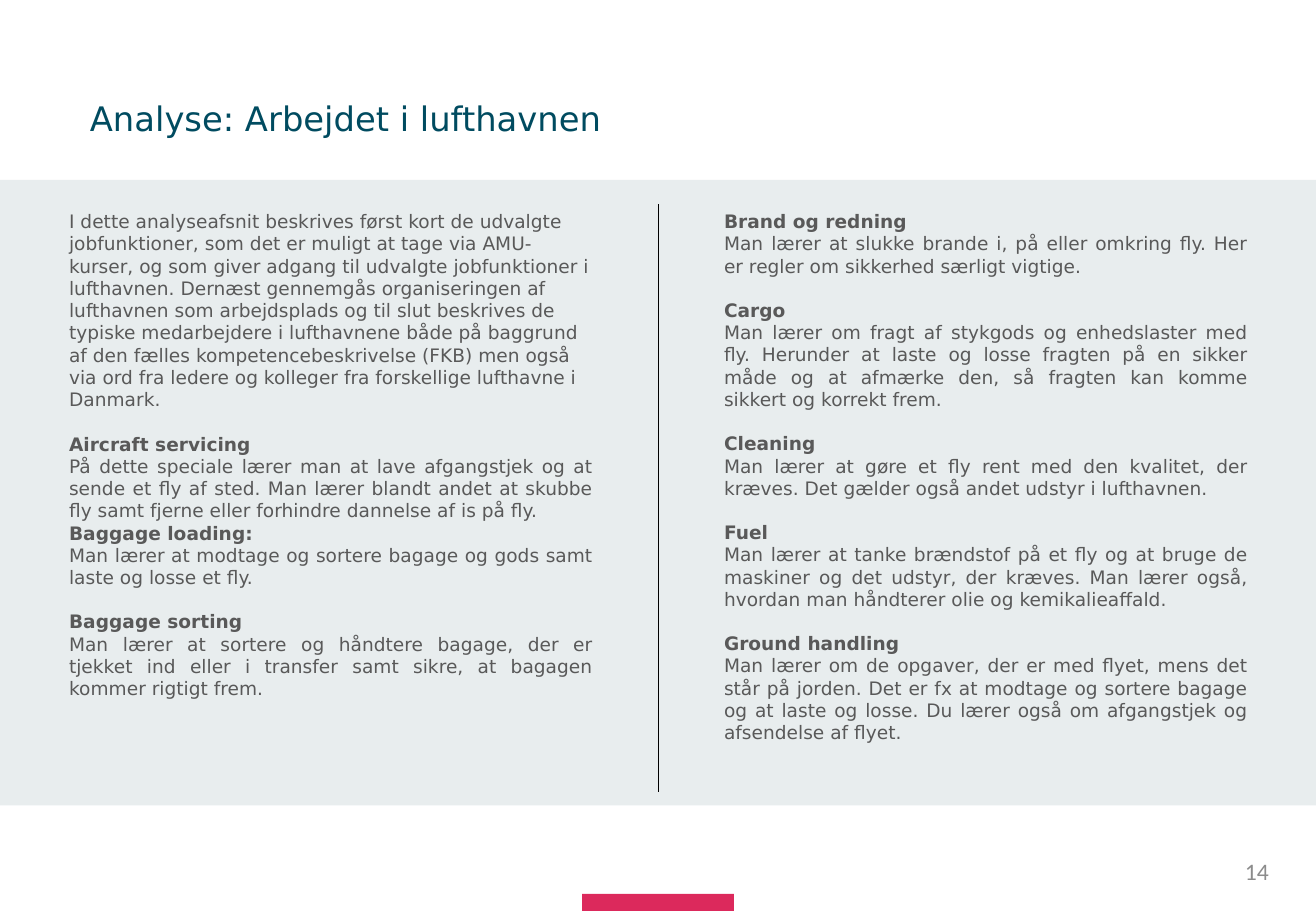
from lxml.etree import SubElement
from pptx import Presentation
from pptx.dml.color import RGBColor
from pptx.enum.shapes import MSO_CONNECTOR as Connector, MSO_SHAPE as Shape
from pptx.enum.text import MSO_ANCHOR as Anchor, PP_ALIGN as Align
from pptx.oxml.ns import qn
from pptx.util import Inches, Pt

BODY_FONT = "DejaVu Sans"
SECTION_GAP = 13

INTRO = (
    "I dette analyseafsnit beskrives først kort de udvalgte jobfunktioner, som det er muligt "
    "at tage via AMU-kurser, og som giver adgang til udvalgte jobfunktioner i lufthavnen. "
    "Dernæst gennemgås organiseringen af lufthavnen som arbejdsplads og til slut beskrives de "
    "typiske medarbejdere i lufthavnene både på baggrund af den fælles kompetencebeskrivelse "
    "(FKB) men også via ord fra ledere og kolleger fra forskellige lufthavne i Danmark."
)

LEFT_SECTIONS = [
    ("Aircraft servicing",
     "På dette speciale lærer man at lave afgangstjek og at sende et fly af sted. Man lærer "
     "blandt andet at skubbe fly samt fjerne eller forhindre dannelse af is på fly.",
     SECTION_GAP),
    ("Baggage loading: ",
     "Man lærer at modtage og sortere bagage og gods samt laste og losse et fly.",
     0),
    ("Baggage sorting",
     "Man lærer at sortere og håndtere bagage, der er tjekket ind eller i transfer samt "
     "sikre, at bagagen kommer rigtigt frem.",
     SECTION_GAP),
]

RIGHT_SECTIONS = [
    ("Brand og redning",
     "Man lærer at slukke brande i, på eller omkring fly. Her er regler om sikkerhed "
     "særligt vigtige.",
     0),
    ("Cargo",
     "Man lærer om fragt af stykgods og enhedslaster med fly. Herunder at laste og losse "
     "fragten på en sikker måde og at afmærke den, så fragten kan komme sikkert og korrekt frem.",
     SECTION_GAP),
    ("Cleaning",
     "Man lærer at gøre et fly rent med den kvalitet, der kræves. Det gælder også andet "
     "udstyr i lufthavnen.",
     SECTION_GAP),
    ("Fuel",
     "Man lærer at tanke brændstof på et fly og at bruge de maskiner og det udstyr, der "
     "kræves. Man lærer også, hvordan man håndterer olie og kemikalieaffald.",
     SECTION_GAP),
    ("Ground handling",
     "Man lærer om de opgaver, der er med flyet, mens det står på jorden. Det er fx at "
     "modtage og sortere bagage og at laste og losse. Du lærer også om afgangstjek og "
     "afsendelse af flyet.",
     SECTION_GAP),
]


def color(hex_code):
    return RGBColor.from_string(hex_code)


def add_block(page, left, top, width, height, fill, opacity=100):
    block = page.shapes.add_shape(
        Shape.RECTANGLE, Inches(left), Inches(top), Inches(width), Inches(height))
    block.shadow.inherit = False
    block.line.fill.background()
    block.fill.solid()
    block.fill.fore_color.rgb = color(fill)
    if opacity < 100:
        tint = block.fill._xPr.find(qn("a:solidFill"))[0]
        SubElement(tint, qn("a:alpha"), val=str(opacity * 1000))


def add_divider(page, x, top, bottom):
    divider = page.shapes.add_connector(
        Connector.STRAIGHT, Inches(x), Inches(top), Inches(x), Inches(bottom))
    divider.line.color.rgb = color("000000")
    divider.line.width = Pt(0.5)
    SubElement(divider._element.spPr, qn("a:effectLst"))


def add_box(page, left, top, width, height, anchor=Anchor.TOP):
    box = page.shapes.add_textbox(Inches(left), Inches(top), Inches(width), Inches(height))
    frame = box.text_frame
    frame.word_wrap = True
    frame.vertical_anchor = anchor
    return frame


def add_para(frame, text, size=11, fill="595959", font=BODY_FONT, bold=False,
             align=Align.JUSTIFY, gap=0):
    first = frame.paragraphs[0]
    para = frame.add_paragraph() if first.runs else first
    para.alignment = align
    if gap:
        para.space_before = Pt(gap)
    span = para.add_run()
    span.text = text
    span.font.name = font
    span.font.size = Pt(size)
    span.font.bold = bold
    span.font.color.rgb = color(fill)
    return para


def add_sections(frame, sections):
    for heading, text, gap in sections:
        add_para(frame, heading, bold=True, gap=gap)
        add_para(frame, text)


def add_title(page, text):
    frame = add_box(page, 0.74, 0.79, 9.34, 0.4, Anchor.MIDDLE)
    frame.margin_left = frame.margin_right = frame.margin_top = frame.margin_bottom = 0
    para = add_para(frame, text, size=20, fill="004B60", align=Align.LEFT)
    para.line_spacing = 0.9


def main():
    deck = Presentation()
    deck.slide_width, deck.slide_height = Inches(10.83), Inches(7.5)
    page = deck.slides.add_slide(deck.slide_layouts[6])

    add_block(page, 4.79, 7.36, 1.25, 0.14, "DC295C")
    add_block(page, 0, 1.48, 10.83, 5.15, "8DA5AD", opacity=20)
    number = add_box(page, 8.1, 6.97, 2.44, 0.4, Anchor.MIDDLE)
    add_para(number, "14", size=14, fill="8C8C8C", font="Calibri", align=Align.RIGHT)
    add_title(page, "Analyse: Arbejdet i lufthavnen")
    add_divider(page, 5.42, 1.68, 6.52)

    left_column, right_column = [add_box(page, left, 1.68, 4.51, 5) for left in (0.47, 5.86)]
    add_para(left_column, INTRO, align=Align.LEFT)
    add_sections(left_column, LEFT_SECTIONS)
    add_sections(right_column, RIGHT_SECTIONS)

    deck.save("out.pptx")


if __name__ == "__main__":
    main()
